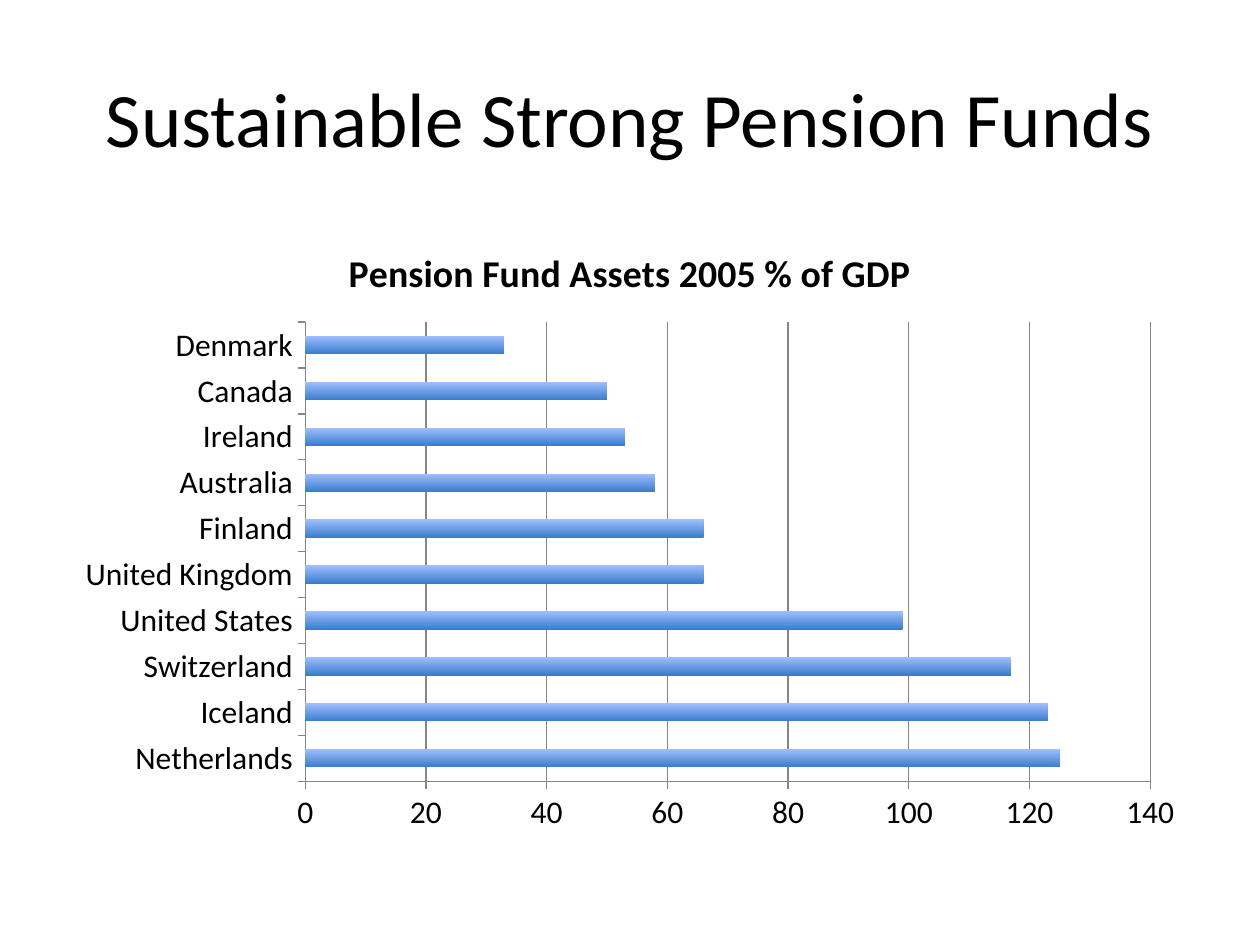
from pptx import Presentation
from pptx.chart.data import CategoryChartData
from pptx.dml.color import RGBColor
from pptx.enum.chart import XL_CHART_TYPE, XL_TICK_MARK
from pptx.enum.text import MSO_ANCHOR, PP_ALIGN
from pptx.util import Inches, Pt

BAR_CLUSTERED = XL_CHART_TYPE.BAR_CLUSTERED
TICK_OUTSIDE = XL_TICK_MARK.OUTSIDE
MIDDLE = MSO_ANCHOR.MIDDLE
CENTER = PP_ALIGN.CENTER

FONT = "Calibri"
BLACK = "000000"
AXIS_GRAY = "868686"
BAR_BOTTOM = "3A7CCB"
BAR_TOP = "A0BFFF"

HEADING = "Sustainable Strong Pension Funds"
ASSETS_TITLE = "Pension Fund Assets 2005 % of GDP"
ASSETS = {
    "Netherlands": 125,
    "Iceland": 123,
    "Switzerland": 117,
    "United States": 99,
    "United Kingdom": 66,
    "Finland": 66,
    "Australia": 58,
    "Ireland": 53,
    "Canada": 50,
    "Denmark": 33,
}


def color(hex_value):
    """Return the colour for a hex string."""
    return RGBColor.from_string(hex_value)


def style_font(font, size, bold=False):
    """Apply the slide's typeface and text colour at the given size."""
    font.name = FONT
    font.size = Pt(size)
    font.bold = bold
    font.color.rgb = color(BLACK)


def style_line(line):
    """Give an axis or gridline its thin gray stroke."""
    line.color.rgb = color(AXIS_GRAY)
    line.width = Pt(0.75)


def add_heading(slide, left, top, width, height):
    """Place the centred slide heading in the given box."""
    frame = slide.shapes.add_textbox(left, top, width, height).text_frame
    frame.word_wrap = True
    frame.vertical_anchor = MIDDLE
    heading = frame.paragraphs[0]
    heading.text = HEADING
    heading.alignment = CENTER
    style_font(heading.font, 44)


def add_assets_chart(slide, left, top, width, height):
    """Place the bar chart of pension fund assets in the given box."""
    assets = CategoryChartData()
    assets.categories = list(ASSETS)
    assets.add_series(ASSETS_TITLE, list(ASSETS.values()))
    chart = slide.shapes.add_chart(
        BAR_CLUSTERED, left, top, width, height, assets
    ).chart
    style_font(chart.font, 18)
    chart.has_legend = False

    chart.has_title = True
    title = chart.chart_title.text_frame.paragraphs[0]
    title.text = ASSETS_TITLE
    style_font(title.font, 21.6, bold=True)
    chart.chart_title.include_in_layout = False

    for axis in (chart.category_axis, chart.value_axis):
        axis.major_tick_mark = TICK_OUTSIDE
        style_line(axis.format.line)
    chart.category_axis.has_major_gridlines = False
    percent_axis = chart.value_axis
    percent_axis.minimum_scale = 0
    percent_axis.maximum_scale = 140
    percent_axis.major_unit = 20
    percent_axis.has_major_gridlines = True
    style_line(percent_axis.major_gridlines.format.line)

    plot = chart.plots[0]
    plot.gap_width = 150
    plot.vary_by_categories = False
    bar_fill = plot.series[0].format.fill
    bar_fill.gradient()
    bar_fill.gradient_angle = 90
    for stop, shade in zip(bar_fill.gradient_stops, (BAR_BOTTOM, BAR_TOP)):
        stop.color.rgb = color(shade)


def main():
    """Build the slide and save it."""
    deck = Presentation()
    deck.slide_width = Inches(10)
    deck.slide_height = Inches(7.5)
    slide = deck.slides.add_slide(deck.slide_layouts[6])
    add_heading(slide, Inches(0.5), Inches(0.3), Inches(9), Inches(1.25))
    add_assets_chart(slide, Inches(0.5), Inches(1.75), Inches(9), Inches(4.95))
    deck.save("out.pptx")


if __name__ == "__main__":
    main()
